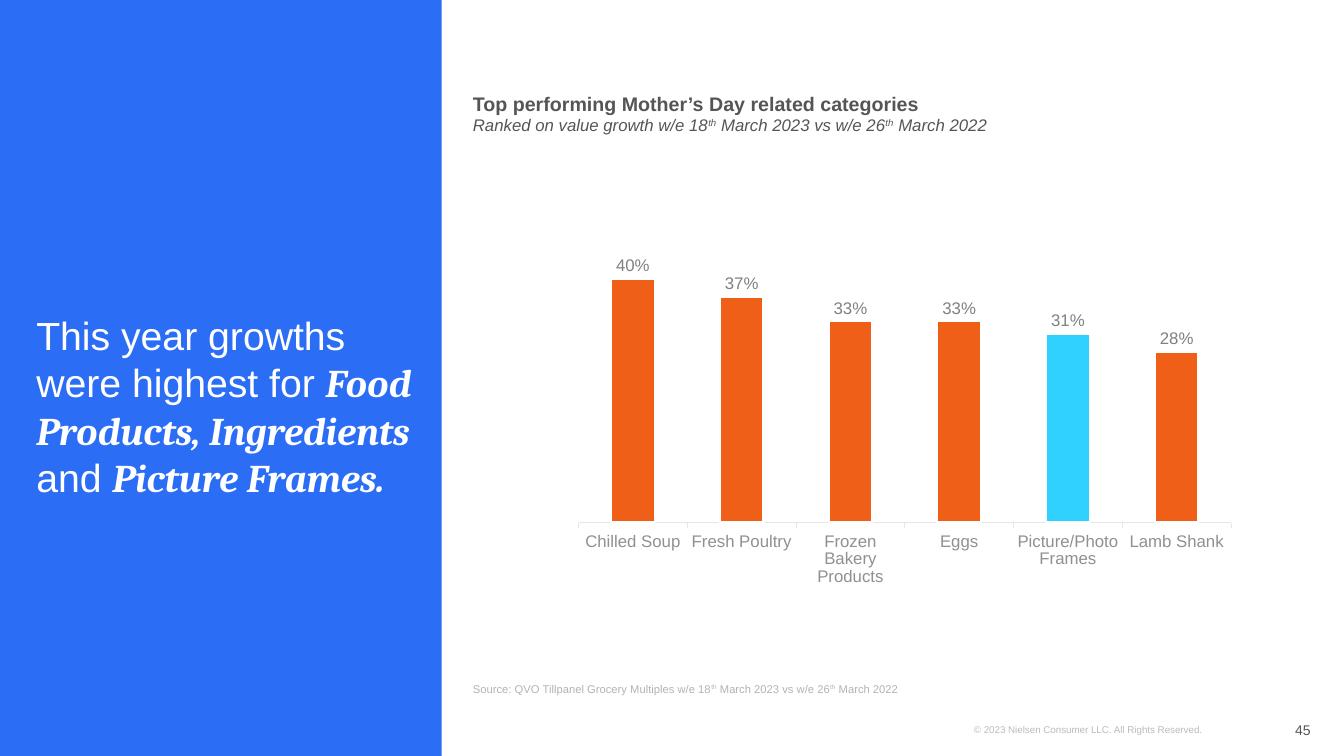
"""Builds a slide on the top performing Mother's Day categories."""
from lxml import etree
from pptx import Presentation
from pptx.chart.data import CategoryChartData
from pptx.dml.color import RGBColor
from pptx.enum.chart import XL_CHART_TYPE as CT, XL_LABEL_POSITION as LP, XL_TICK_MARK as TM
from pptx.enum.shapes import MSO_SHAPE
from pptx.enum.text import MSO_ANCHOR as MA, MSO_AUTO_SIZE, PP_ALIGN as AL
from pptx.oxml.ns import qn
from pptx.util import Inches, Pt

COLORS = {"panel": "2C6DF6", "white": "FFFFFF", "text": "555555", "copyright": "BBBBBB",
          "source": "B3B3B3", "bar": "EF5F17", "highlight": "30D1FF",
          "axis": "E6E6E6", "category": "909090", "label": "808080"}
PLAIN = {"name": "Arial", "bold": False, "italic": False}
STRONG = {"name": "Cambria", "bold": True, "italic": True}
HEAD = {"name": "Arial", "bold": True, "italic": False}
SUB = {"name": "Arial", "bold": False, "italic": True}

TITLE = [("This year growths were highest for ", PLAIN), ("Food Products, Ingredients ", STRONG),
         ("and ", PLAIN), ("Picture Frames.", STRONG)]
HEADING = "Top performing Mother’s Day related categories"
RANKING = ["Ranked on value growth w/e 18", "th", " March 2023 vs w/e 26", "th", " March 2022"]
SOURCE = ["Source: QVO Tillpanel Grocery Multiples w/e 18", *RANKING[1:]]
COPYRIGHT = "© 2023 Nielsen Consumer LLC. All Rights Reserved."
PAGE = "45"
GROWTH = {"Chilled Soup": 0.4, "Fresh Poultry": 0.37, "Frozen Bakery Products": 0.33,
          "Eggs": 0.33, "Picture/Photo Frames": 0.31, "Lamb Shank": 0.28}
HIGHLIGHT = "Picture/Photo Frames"
PLOT = {"x": 0.172, "y": 0.299, "w": 0.728, "h": 0.459}


def rgb(key):
    return RGBColor.from_string(COLORS[key])


def inches(box):
    return [Inches(v) for v in box]


def style(font, size, color, fmt=PLAIN):
    for name, value in {**fmt, "size": Pt(size)}.items():
        setattr(font, name, value)
    font.color.rgb = rgb(color)


def place(sp, box, anchor):
    sp.left, sp.top, sp.width, sp.height = inches(box)
    tf = sp.text_frame
    for name, value in {"word_wrap": True, "auto_size": MSO_AUTO_SIZE.NONE,
                        "vertical_anchor": anchor, "margin_left": 0, "margin_right": 0,
                        "margin_top": Inches(0.05), "margin_bottom": Inches(0.05)}.items():
        setattr(tf, name, value)
    return tf


def write(p, runs, size, color, align=AL.LEFT):
    p.alignment = align
    p.space_before = Pt(0)
    for text, fmt in runs:
        r = p.add_run()
        r.text = text
        style(r.font, size, color, fmt)
        if text == "th":
            r.font._element.set("baseline", "30000")


def textbox(s, box, anchor):
    return place(s.shapes.add_textbox(*inches(box)), box, anchor)


def paint(fmt, color):
    fmt.fill.solid()
    fmt.fill.fore_color.rgb = rgb(color)
    fmt.line.color.rgb = rgb("white")
    fmt.line.width = Pt(1.5)


def set_plot_layout(chart):
    area = chart._chartSpace.find(".//" + qn("c:plotArea"))
    for old in area.findall(qn("c:layout")):
        area.remove(old)
    layout = etree.Element(qn("c:layout"))
    manual = etree.SubElement(layout, qn("c:manualLayout"))
    values = {"layoutTarget": "inner", "xMode": "edge", "yMode": "edge", **PLOT}
    for tag, value in values.items():
        etree.SubElement(manual, qn("c:" + tag)).set("val", str(value))
    area.insert(0, layout)


def add_growth_chart(s):
    data = CategoryChartData(number_format="0%")
    data.categories = list(GROWTH)
    data.add_series("Series 1", list(GROWTH.values()))
    chart = s.shapes.add_chart(CT.COLUMN_CLUSTERED, *inches((4.21, 0.69, 8.89, 5.93)), data).chart
    style(chart.font, 10, "text")
    chart.has_legend = chart.has_title = False
    set_plot_layout(chart)

    cat, val = chart.category_axis, chart.value_axis
    cat.major_tick_mark = TM.OUTSIDE
    cat.format.line.color.rgb = rgb("axis")
    cat.format.line.width = Pt(0.75)
    style(cat.tick_labels.font, 12, "category")
    for name, value in {"visible": False, "has_major_gridlines": False,
                        "minimum_scale": 0, "maximum_scale": 0.45}.items():
        setattr(val, name, value)

    plot = chart.plots[0]
    plot.gap_width = 150
    plot.vary_by_categories = False
    plot.has_data_labels = True
    labels = plot.data_labels
    for name, value in {"show_value": True, "number_format": "0%",
                        "number_format_is_linked": False, "position": LP.OUTSIDE_END}.items():
        setattr(labels, name, value)
    style(labels.font, 12, "label")

    series = plot.series[0]
    paint(series.format, "highlight")
    for i, name in enumerate(GROWTH):
        paint(series.points[i].format, "highlight" if name == HIGHLIGHT else "bar")


def main():
    prs = Presentation()
    prs.slide_width, prs.slide_height = Inches(13.33), Inches(7.5)
    s = prs.slides.add_slide(prs.slide_layouts[1])

    panel = s.shapes.add_shape(MSO_SHAPE.RECTANGLE, *inches((0, 0, 4.38, 7.5)))
    panel.shadow.inherit = False
    panel.fill.solid()
    panel.fill.fore_color.rgb = rgb("panel")
    panel.line.fill.background()
    s.shapes._spTree.insert(2, panel._element)

    tf = place(s.shapes.title, (0.36, 2.29, 3.83, 2.72), MA.BOTTOM)
    write(tf.paragraphs[0], TITLE, 28, "white")

    p = place(s.placeholders[1], (4.69, 6.55, 8.31, 0.4), MA.BOTTOM).paragraphs[0]
    pPr = p._p.get_or_add_pPr()
    pPr.set("marL", "0")
    pPr.set("indent", "0")
    etree.SubElement(pPr, qn("a:buNone"))
    write(p, [(t, PLAIN) for t in SOURCE], 8, "source")

    add_growth_chart(s)

    tf = textbox(s, (4.69, 0.86, 8.32, 0.77), MA.TOP)
    write(tf.paragraphs[0], [(HEADING, HEAD)], 14, "text")
    write(tf.add_paragraph(), [(t, SUB) for t in RANKING], 12, "text")

    tf = textbox(s, (9.66, 7.13, 2.84, 0.22), MA.TOP)
    write(tf.paragraphs[0], [(COPYRIGHT, PLAIN)], 7, "copyright")
    tf = textbox(s, (12.01, 7.04, 0.99, 0.4), MA.MIDDLE)
    write(tf.paragraphs[0], [(PAGE, PLAIN)], 10, "text", AL.RIGHT)

    prs.save("out.pptx")


if __name__ == "__main__":
    main()
